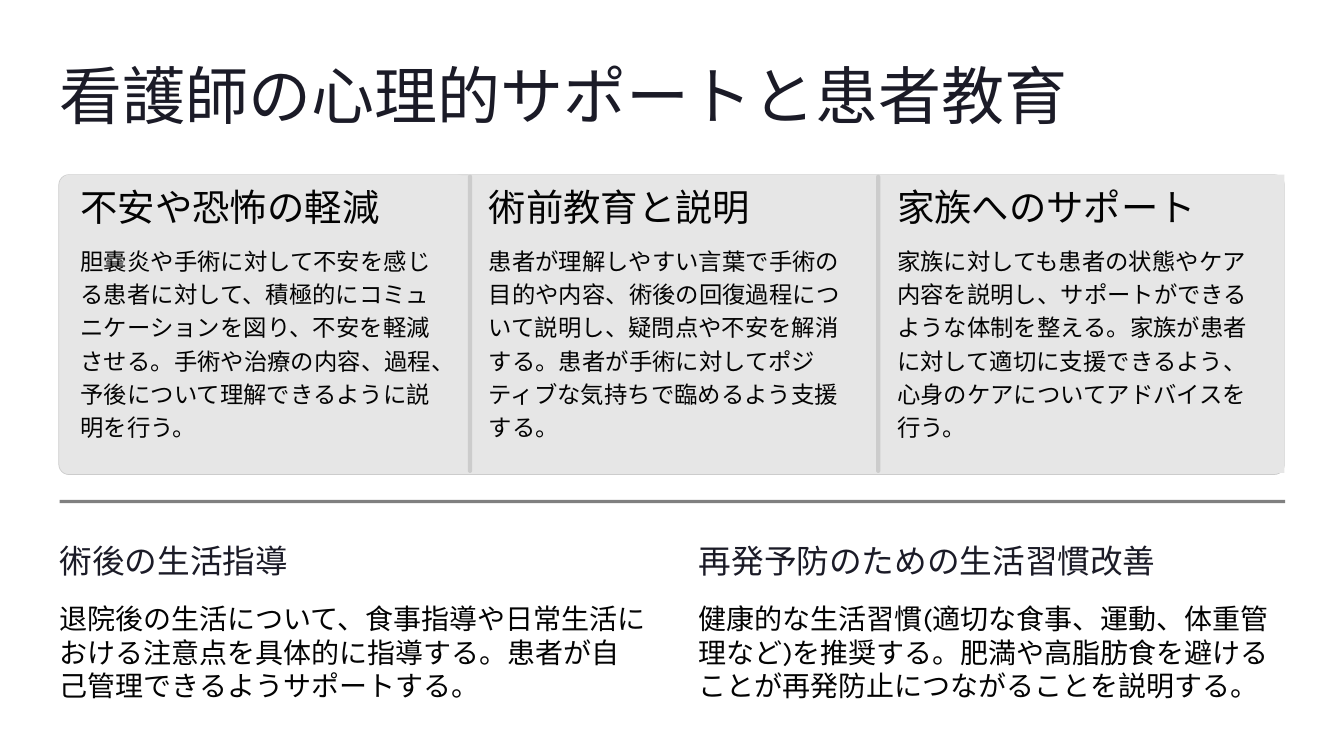
import pptx
import pptx.util
import pptx.dml.color
import pptx.enum.shapes
import pptx.oxml
import pptx.oxml.ns
import lxml.etree

PX = 9144
COLOURS = {
    "paper": "FFFFFF",
    "panel": "E6E6E6",
    "edge": "CCCCCC",
    "ink": "030303",
    "heading": "1B1B27",
}
SHAPES = pptx.enum.shapes.MSO_SHAPE

CARDS = [
    ("不安や恐怖の軽減",
     "胆嚢炎や手術に対して不安を感じる患者に対して、積極的にコミュニケーションを図り、不安を軽減させる。手術や治療の内容、過程、予後について理解できるように説明を行う。"),
    ("術前教育と説明",
     "患者が理解しやすい言葉で手術の目的や内容、術後の回復過程について説明し、疑問点や不安を解消する。患者が手術に対してポジティブな気持ちで臨めるよう支援する。"),
    ("家族へのサポート",
     "家族に対しても患者の状態やケア内容を説明し、サポートができるような体制を整える。家族が患者に対して適切に支援できるよう、心身のケアについてアドバイスを行う。"),
]
ADVICE = [
    ("術後の生活指導",
     "退院後の生活について、食事指導や日常生活における注意点を具体的に指導する。患者が自己管理できるようサポートする。"),
    ("再発予防のための生活習慣改善",
     "健康的な生活習慣(適切な食事、運動、体重管理など)を推奨する。肥満や高脂肪食を避けることが再発防止につながることを説明する。"),
]


class SlideBuilder:
    def __init__(self, page):
        self.page = page
        self.heading_font = "Inter"
        self.body_font = "Karla"
        fill = page.background.fill
        fill.solid()
        fill.fore_color.rgb = self.colour("paper")

    def colour(self, name):
        return pptx.dml.color.RGBColor.from_string(COLOURS[name])

    def shape(self, kind, place, fill, line=None, rounding=None, opacity=None):
        item = self.page.shapes.add_shape(kind, *(n * PX for n in place))
        item.shadow.inherit = False
        item.fill.solid()
        item.fill.fore_color.rgb = self.colour(fill)
        if line:
            item.line.color.rgb = self.colour(line)
            item.line.width = pptx.util.Pt(0.6)
        else:
            item.line.fill.background()
        if rounding is not None:
            item.adjustments[0] = rounding
        if opacity is not None:
            tint = item._element.spPr.find(".//" + pptx.oxml.ns.qn("a:srgbClr"))
            alpha = lxml.etree.SubElement(tint, pptx.oxml.ns.qn("a:alpha"))
            alpha.set("val", str(opacity * 1000))

    def text(self, place, words, font, size, colour, spacing):
        box = self.page.shapes.add_textbox(*(n * PX for n in place))
        frame = box.text_frame
        frame_format = {"margin_left": 0, "margin_top": 0, "margin_right": 0,
                        "margin_bottom": 0, "word_wrap": True}
        for name, value in frame_format.items():
            setattr(frame, name, value)
        para = frame.paragraphs[0]
        para.line_spacing = pptx.util.Pt(spacing)
        span = para.add_run()
        span.text = words
        span_format = {"name": font, "size": pptx.util.Pt(size)}
        for name, value in span_format.items():
            setattr(span.font, name, value)
        span.font.color.rgb = self.colour(colour)

    def heading(self, place, words, size, colour="heading", spacing=28):
        self.text(place, words, self.heading_font, size, colour, spacing)

    def body(self, place, words, size):
        self.text(place, words, self.body_font, size, "ink", 28.5)

    def card(self, index, title, words):
        left = 71 + 486 * index
        place = (left, 208, 486, 355)
        if index == 0:
            self.shape(SHAPES.ROUNDED_RECTANGLE, place, "panel", rounding=0.035)
        else:
            self.shape(SHAPES.RECTANGLE, place, "panel")
            self.shape(SHAPES.ROUNDED_RECTANGLE, (left, 208, 5, 355), "edge",
                       rounding=0.5)
        self.heading((left + 25, 234, 436, 46), title, 32, "ink")
        self.body((left + 25, 288, 436, 234), words, 20)

    def advice(self, index, title, words):
        left = 71 + 761 * index
        self.heading((left, 652, 699, 39), title, 28)
        self.body((left, 717, 699, 121), words, 24)


def main():
    deck = pptx.Presentation()
    deck.slide_width = 1600 * PX
    deck.slide_height = 900 * PX
    builder = SlideBuilder(deck.slides.add_slide(deck.slide_layouts[6]))
    builder.heading((71, 79, 1250, 79), "看護師の心理的サポートと患者教育", 54,
                    spacing=56.5)
    builder.shape(SHAPES.ROUNDED_RECTANGLE, (70, 208, 1459, 357), "panel",
                  line="edge", rounding=0.034)
    for index, (title, words) in enumerate(CARDS):
        builder.card(index, title, words)
    builder.shape(SHAPES.RECTANGLE, (71, 595, 1459, 4), "ink", opacity=50)
    for index, (title, words) in enumerate(ADVICE):
        builder.advice(index, title, words)
    deck.save("out.pptx")


if __name__ == "__main__":
    main()
